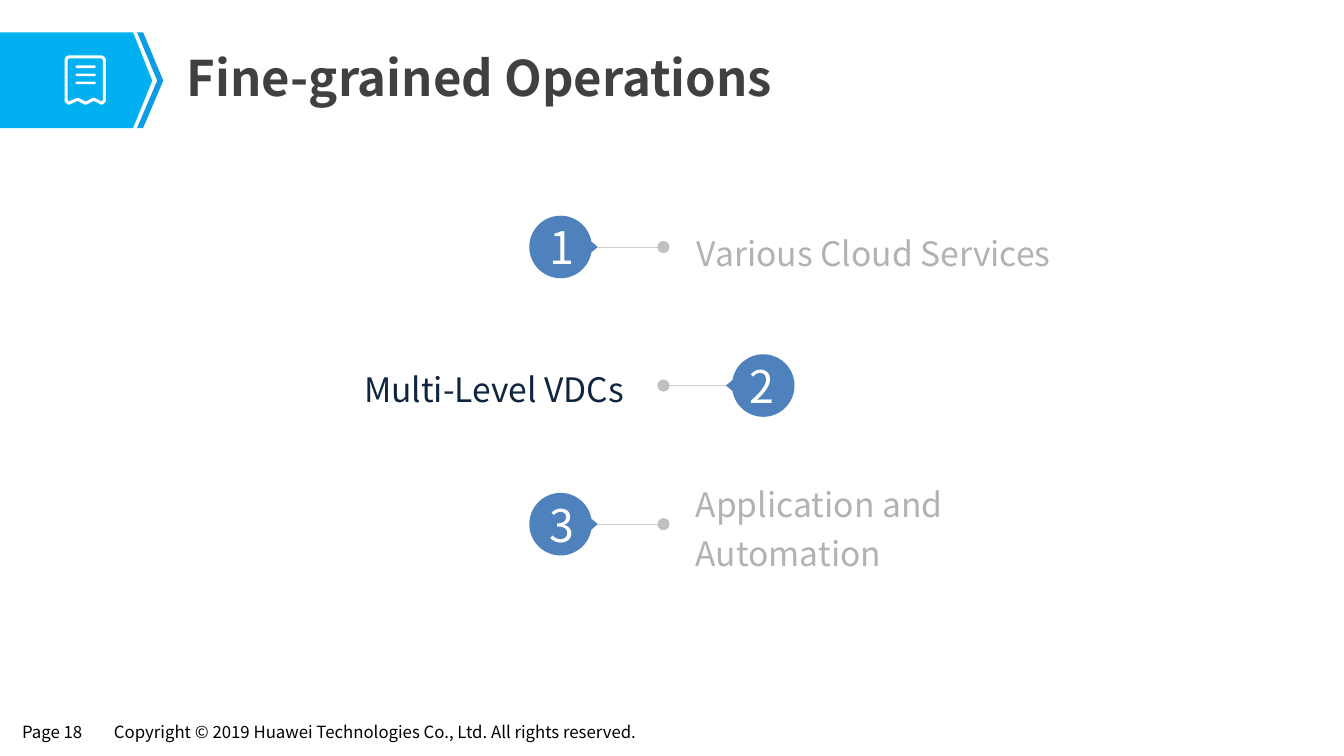
from math import cos, sin, radians
from pptx import Presentation
from pptx.dml.color import RGBColor
from pptx.enum.shapes import MSO_CONNECTOR, MSO_SHAPE
from pptx.enum.text import MSO_ANCHOR as ANCHOR, PP_ALIGN as ALIGN
from pptx.oxml.ns import qn
from pptx.util import Inches, Pt
from lxml import etree

FONT = "Noto Sans CJK SC"
CYAN, SKY = RGBColor(0x00, 0xB0, 0xF0), RGBColor(0x0B, 0x9C, 0xE5)
BLUE, NAVY = RGBColor(0x4F, 0x81, 0xBD), RGBColor(0x0F, 0x24, 0x3E)
WHITE, BLACK = RGBColor(255, 255, 255), RGBColor(0, 0, 0)
DARK, MUTED = RGBColor(0x40, 0x40, 0x40), RGBColor(0xB2, 0xB2, 0xB2)
DOT, RULE = RGBColor(0xC0, 0xC0, 0xC0), RGBColor(0xCF, 0xCF, 0xCF)

# Content: number, label, label box (left, top, width), colour, pin side
TITLE = "Fine-grained Operations"
FOOTER = [
    ("Page 18", 0.13, 0.84),
    ("Copyright © 2019 Huawei Technologies Co., Ltd. All rights reserved.", 1.04, 5.61),
]
TOPICS = [
    (1, "Various Cloud Services", (6.91, 1.96, 3.82), MUTED, "left"),
    (2, "Multi-Level VDCs", (1.43, 3.3, 4.76), NAVY, "right"),
    (3, "Application and Automation", (6.9, 4.69, 4.09), MUTED, "left"),
]
FIRST_Y, STEP_Y = 2.45, 1.375
AXIS_X, DOT_SIZE = 6.58, 0.12
PIN_RADIUS, PIN_TIP = 0.31, 0.37

# Header outlines
BANNER = [(0, 0.32), (1.32, 0.32), (1.51, 0.8), (1.32, 1.27), (0, 1.27)]
CHEVRON = [(1.36, 0.32), (1.42, 0.32), (1.62, 0.8), (1.42, 1.27), (1.36, 1.27), (1.56, 0.8)]
RECEIPT_FOOT = [(1.035, 1), (1.01, 1.025), (0.93, 0.985), (0.85, 1.025),
                (0.77, 0.985), (0.68, 1.025), (0.655, 1)]
RECEIPT_ROWS = [0.65, 0.73, 0.81]

prs = Presentation()
prs.slide_width, prs.slide_height = Inches(13.33), Inches(7.5)
s = prs.slides.add_slide(prs.slide_layouts[6])


def paint(sp, fill=None, line=None, width=0):
    sp.shadow.inherit = False
    if fill is None:
        sp.fill.background()
    else:
        sp.fill.solid()
        sp.fill.fore_color.rgb = fill
    if line is None:
        sp.line.fill.background()
    else:
        sp.line.color.rgb = line
        sp.line.width = Pt(width)
    return sp


def outline(points, **style):
    pts = [(Inches(x), Inches(y)) for x, y in points]
    fb = s.shapes.build_freeform(*pts[0], scale=1.0)
    fb.add_line_segments(pts[1:], close=True)
    return paint(fb.convert_to_shape(), **style)


def preset(kind, x, y, w, h, fill):
    return paint(s.shapes.add_shape(kind, Inches(x), Inches(y), Inches(w), Inches(h)), fill)


def arc(cx, cy, radius, start, end, step=5):
    return [(cx + radius * cos(radians(a)), cy + radius * sin(radians(a)))
            for a in range(start, end + 1, step)]


def write(sp, text, size, color, bold=False, align=ALIGN.LEFT, spacing=None,
          insets=(0, 0, 0, 0), wrap=True):
    tf = sp.text_frame
    tf.word_wrap, tf.vertical_anchor = wrap, ANCHOR.MIDDLE
    tf.margin_left, tf.margin_top, tf.margin_right, tf.margin_bottom = map(Inches, insets)
    p = tf.paragraphs[0]
    p.alignment = align
    if spacing:
        p.line_spacing = spacing
    r = p.add_run()
    r.text = text
    r.font.name, r.font.size, r.font.bold = FONT, Pt(size), bold
    r.font.color.rgb = color
    for tag in ("a:ea", "a:cs"):
        etree.SubElement(r.font._element, qn(tag)).set("typeface", FONT)


def textbox(x, y, w, h):
    return s.shapes.add_textbox(Inches(x), Inches(y), Inches(w), Inches(h))


# Footer
for text, x, w in FOOTER:
    write(textbox(x, 7.11, w, 0.29), text, 12, BLACK,
          insets=(0.09, 0.04, 0.09, 0.04), wrap=False)

# Header banner with receipt icon
outline(BANNER, fill=CYAN)
outline(CHEVRON, fill=SKY)
corners = arc(0.69, 0.6, 0.035, 180, 270, 15) + arc(1, 0.6, 0.035, 270, 360, 15)
outline(corners + RECEIPT_FOOT, line=WHITE, width=2.2)
for y in RECEIPT_ROWS:
    preset(MSO_SHAPE.ROUNDED_RECTANGLE, 0.75, y, 0.2, 0.025, WHITE).adjustments[0] = 0.5
write(textbox(1.74, 0.45, 10.75, 0.7), TITLE, 35, DARK, bold=True, spacing=0.9,
      insets=(0.11, 0.06, 0.11, 0.06))

# Topics: rule, label, dot and numbered pin
for i, (number, label, (x, top, w), color, side) in enumerate(TOPICS):
    y = FIRST_Y + i * STEP_Y
    on_left = side == "left"
    pin_x, tip = (5.56, PIN_TIP) if on_left else (7.57, -PIN_TIP)

    rule = s.shapes.add_connector(MSO_CONNECTOR.STRAIGHT, Inches(AXIS_X), Inches(y),
                                  Inches(pin_x + tip), Inches(y))
    rule.line.color.rgb, rule.line.width = RULE, Pt(0.5)
    etree.SubElement(rule._element.spPr, qn("a:effectLst"))

    write(textbox(x, top, w, 1.03), label, 24, color, spacing=1.2,
          align=ALIGN.LEFT if on_left else ALIGN.RIGHT)
    preset(MSO_SHAPE.OVAL, AXIS_X - DOT_SIZE / 2, y - DOT_SIZE / 2, DOT_SIZE, DOT_SIZE, DOT)

    turn = 0 if on_left else 180
    pin = outline(arc(pin_x, y, PIN_RADIUS, turn + 10, turn + 350) + [(pin_x + tip, y)], fill=BLUE)
    write(pin, str(number), 32, WHITE, align=ALIGN.CENTER,
          insets=(0, 0, 0.04, 0) if on_left else (0.04, 0, 0, 0))

prs.save("out.pptx")
